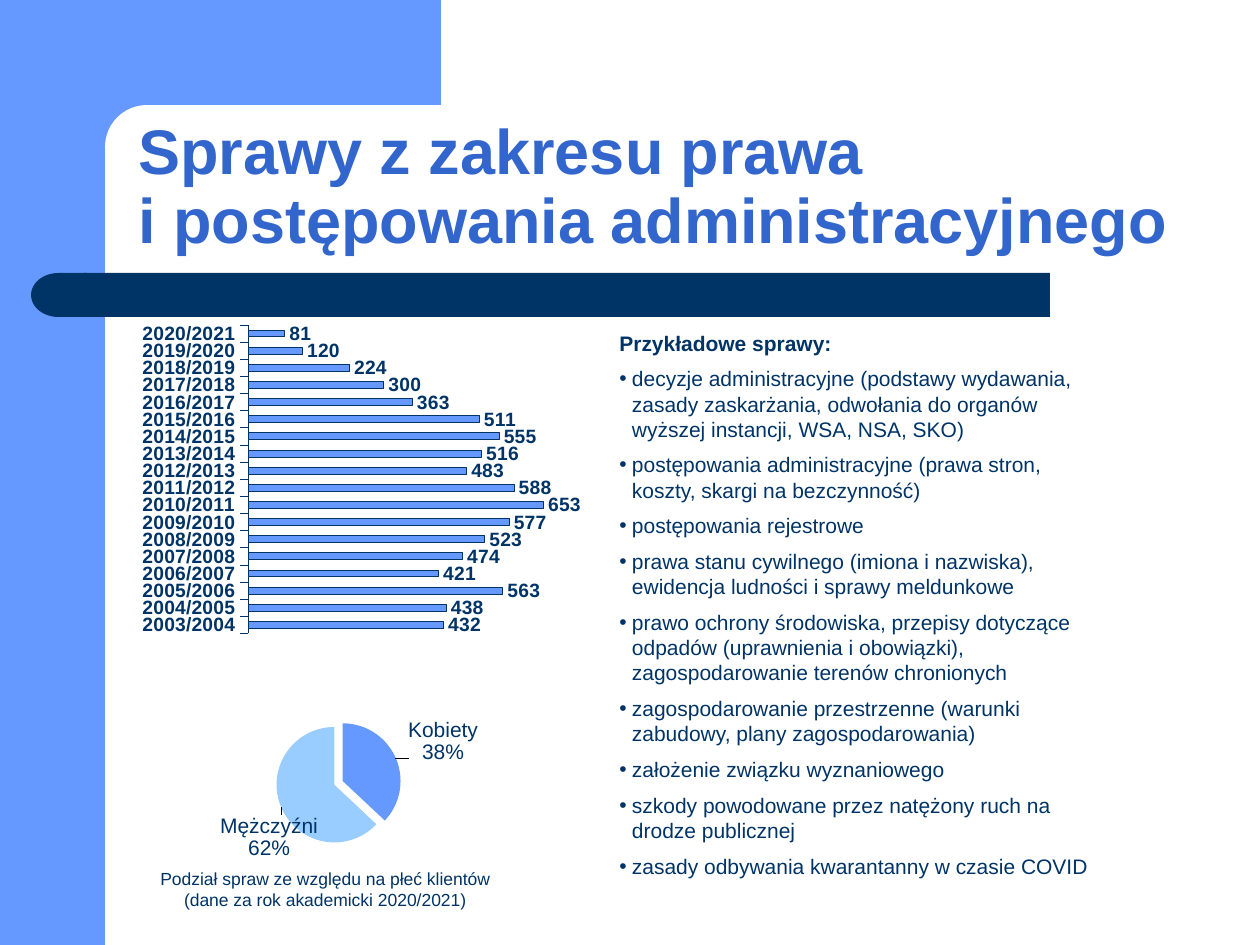
from copy import deepcopy
from dataclasses import dataclass

from lxml import etree
from pptx import Presentation, util as u
from pptx.chart.data import CategoryChartData
from pptx.dml.color import RGBColor
from pptx.enum import chart as ch, shapes, text
from pptx.oxml.ns import qn

# Content
TITLE = "Sprawy z zakresu prawa \vi postępowania administracyjnego"
CASES_HEADING = "Przykładowe sprawy:"
CASES = [
    "decyzje administracyjne (podstawy wydawania, zasady zaskarżania, odwołania do organów wyższej instancji, WSA, NSA, SKO)",
    "postępowania administracyjne (prawa stron, koszty, skargi na bezczynność)",
    "postępowania rejestrowe",
    "prawa stanu cywilnego (imiona i nazwiska), ewidencja ludności i sprawy meldunkowe",
    "prawo ochrony środowiska, przepisy dotyczące odpadów (uprawnienia i obowiązki), zagospodarowanie terenów chronionych",
    "zagospodarowanie przestrzenne (warunki zabudowy, plany zagospodarowania)",
    "założenie związku wyznaniowego",
    "szkody powodowane przez natężony ruch na drodze publicznej",
    "zasady odbywania kwarantanny w czasie COVID",
]
FIRST_YEAR = 2003
CASES_PER_YEAR = [432, 438, 563, 421, 474, 523, 577, 653, 588,
                  483, 516, 555, 511, 363, 300, 224, 120, 81]
CLIENTS = [("Kobiety", 37, "38%"), ("Mężczyźni", 63, "62%")]
CAPTION = "Podział spraw ze względu na płeć klientów (dane za rok akademicki 2020/2021)"


@dataclass
class Theme:
    font: str = "Arial"
    navy: str = "003366"
    title_blue: str = "3366CC"
    blue: str = "6699FF"
    light: str = "99CCFF"
    white: str = "FFFFFF"
    title: int = 36
    body: int = 12
    axis: int = 11
    caption: int = 10


T = Theme()
PX = u.Inches(1) / 126


def px(*lengths):
    return [u.Emu(round(n * PX)) for n in lengths]


def set_font(font, size, color=T.navy, bold=False):
    font.name, font.size, font.bold = T.font, u.Pt(size), bold
    font.color.rgb = RGBColor.from_string(color)


def set_fill(part, color):
    part.fill.solid()
    part.fill.fore_color.rgb = RGBColor.from_string(color)


def write(frame, words, size=T.body, color=T.navy, bold=False, align=None,
          before=0, spacing=None, bullet=False, new=False):
    """Add one formatted paragraph to a text frame."""
    para = frame.add_paragraph() if new else frame.paragraphs[0]
    para.text = words
    para.alignment = align
    para.space_before = u.Pt(before)
    para.line_spacing = spacing
    for run in para.runs:
        set_font(run.font, size, color, bold)
    for br in para._p.findall(qn("a:br")):
        br.insert(0, deepcopy(para.runs[0]._r.rPr))
    if bullet:
        props = para._p.get_or_add_pPr()
        indent = u.Inches(0.1)
        props.set("marL", str(indent))
        props.set("indent", str(-indent))
        etree.SubElement(props, qn("a:buFont")).set("typeface", T.font)
        etree.SubElement(props, qn("a:buChar")).set("char", "•")


def text_box(slide, *box):
    frame = slide.shapes.add_textbox(*px(*box)).text_frame
    frame.word_wrap = True
    return frame


def manual_layout(parent, before, **values):
    """Place a chart part by fractions of the chart area."""
    for old in parent.findall(qn("c:layout")):
        parent.remove(old)
    layout = etree.Element(qn("c:layout"))
    manual = etree.SubElement(layout, qn("c:manualLayout"))
    for tag, value in values.items():
        etree.SubElement(manual, qn(f"c:{tag}")).set("val", str(value))
    parent.insert(before, layout)


def place_plot(chart, x, y, w, h):
    area = chart._chartSpace.chart.plotArea
    manual_layout(area, 0, layoutTarget="inner", xMode="edge", yMode="edge",
                  x=x, y=y, w=w, h=h)


def add_chart(slide, kind, box, names, values):
    data = CategoryChartData()
    data.categories = names
    data.add_series("Sprawy", values)
    chart = slide.shapes.add_chart(kind, *px(*box), data).chart
    chart.has_legend = chart.has_title = False
    set_font(chart.font, T.body)
    chart.plots[0].vary_by_categories = False
    return chart


def add_backdrop(slide):
    kinds = shapes.MSO_SHAPE
    for kind, box, color, round_by, turn in [
        (kinds.RECTANGLE, (0, 0, 105, 945), T.blue, None, 0),
        (kinds.RECTANGLE, (94, 0, 347, 147), T.blue, None, 0),
        (kinds.ROUNDED_RECTANGLE, (105, 105, 703, 84), T.white, 0.5, 0),
        (kinds.RECTANGLE, (84, 273, 966, 44), T.navy, None, 0),
        (kinds.FLOWCHART_DELAY, (31, 273, 55, 44), T.navy, None, 180),
    ]:
        part = slide.shapes.add_shape(kind, *px(*box))
        part.shadow.inherit = False
        set_fill(part, color)
        part.line.fill.background()
        part.rotation = turn
        if round_by is not None:
            part.adjustments[0] = round_by


def add_year_chart(slide):
    years = [f"{FIRST_YEAR + i}/{FIRST_YEAR + i + 1}" for i in range(len(CASES_PER_YEAR))]
    chart = add_chart(slide, ch.XL_CHART_TYPE.BAR_CLUSTERED, (95, 296, 546, 359),
                      years, CASES_PER_YEAR)
    place_plot(chart, 0.28, 0.08, 0.58, 0.86)
    plot = chart.plots[0]
    plot.gap_width = 150
    bars = plot.series[0].format
    set_fill(bars, T.blue)
    bars.line.color.rgb = RGBColor.from_string(T.navy)
    bars.line.width = u.Pt(0.25)
    plot.has_data_labels = True
    plot.data_labels.show_value = True
    plot.data_labels.position = ch.XL_LABEL_POSITION.OUTSIDE_END
    set_font(plot.data_labels.font, T.axis, bold=True)

    chart.value_axis.visible = False
    chart.value_axis.has_major_gridlines = False
    chart.value_axis.minimum_scale, chart.value_axis.maximum_scale = 0, 700
    axis = chart.category_axis
    axis.major_tick_mark = ch.XL_TICK_MARK.OUTSIDE
    set_font(axis.tick_labels.font, T.axis, bold=True)
    axis.format.line.color.rgb = RGBColor.from_string(T.navy)
    axis.format.line.width = u.Pt(0.15)
    # Show every year label, even where they sit tight
    axis._element.find(qn("c:txPr")).find(qn("a:bodyPr")).set("rot", "0")
    skip = etree.Element(qn("c:tickLblSkip"))
    skip.set("val", "1")
    axis._element.find(qn("c:noMultiLvlLbl")).addprevious(skip)


def add_client_chart(slide):
    names, shares, percents = zip(*CLIENTS)
    chart = add_chart(slide, ch.XL_CHART_TYPE.PIE, (52, 679, 546, 208), names, shares)
    place_plot(chart, 0.41, 0.2, 0.23, 0.6)
    series = chart.plots[0].series[0]
    offsets = [(0.01, 0.04), (0.08, 0.02)]
    for i, color in enumerate([T.blue, T.light]):
        point = series.points[i]
        set_fill(point.format, color)
        point.format.line.fill.background()
        label = point.data_label
        write(label.text_frame, names[i])
        write(label.text_frame, percents[i], new=True)
        label.position = ch.XL_LABEL_POSITION.OUTSIDE_END
        x, y = offsets[i]
        manual_layout(label._dLbl, 1, x=x, y=y)
    explosion = etree.Element(qn("c:explosion"))
    explosion.set("val", "8")
    series._element.find(qn("c:dPt")).addprevious(explosion)


def main():
    deck = Presentation()
    deck.slide_width, deck.slide_height = px(1260, 945)
    slide = deck.slides.add_slide(deck.slide_layouts[5])
    add_backdrop(slide)

    # Title, brought in front of the backdrop
    title = slide.shapes.title
    title.left, title.top, title.width, title.height = px(126, 105, 1102, 158)
    title.text_frame.vertical_anchor = text.MSO_ANCHOR.BOTTOM
    title.text_frame.auto_size = text.MSO_AUTO_SIZE.NONE
    write(title.text_frame, TITLE, size=T.title, color=T.title_blue, bold=True,
          align=text.PP_ALIGN.LEFT, spacing=0.9)
    slide.shapes._spTree.append(title._element)

    # Example cases
    cases = text_box(slide, 607, 324, 509, 585)
    write(cases, CASES_HEADING, bold=True)
    for case in CASES:
        write(cases, case, before=6, bullet=True, new=True)

    # Charts and caption
    add_year_chart(slide)
    add_client_chart(slide)
    write(text_box(slide, 134, 862, 382, 54), CAPTION, size=T.caption,
          align=text.PP_ALIGN.CENTER)
    deck.save("out.pptx")


if __name__ == "__main__":
    main()
